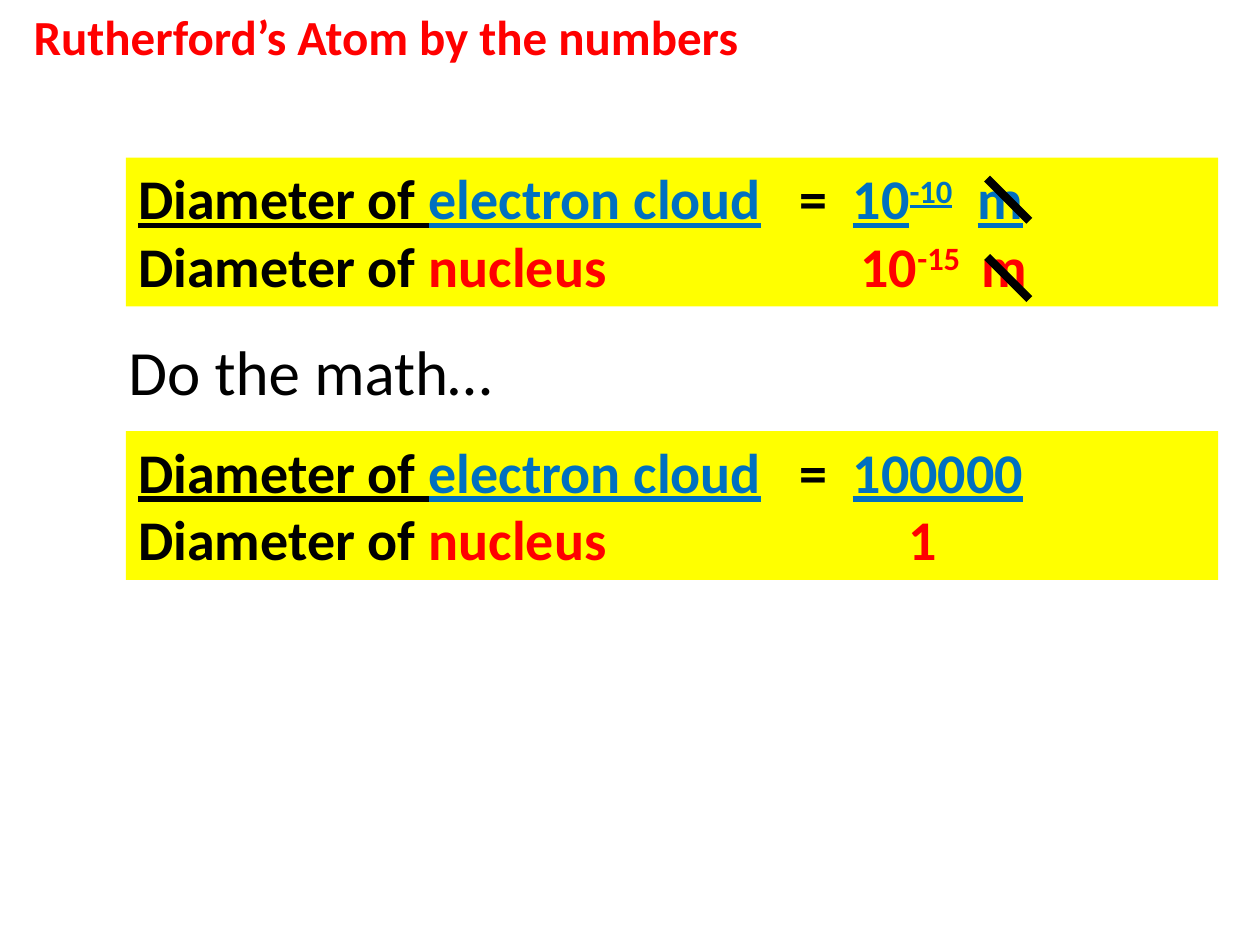
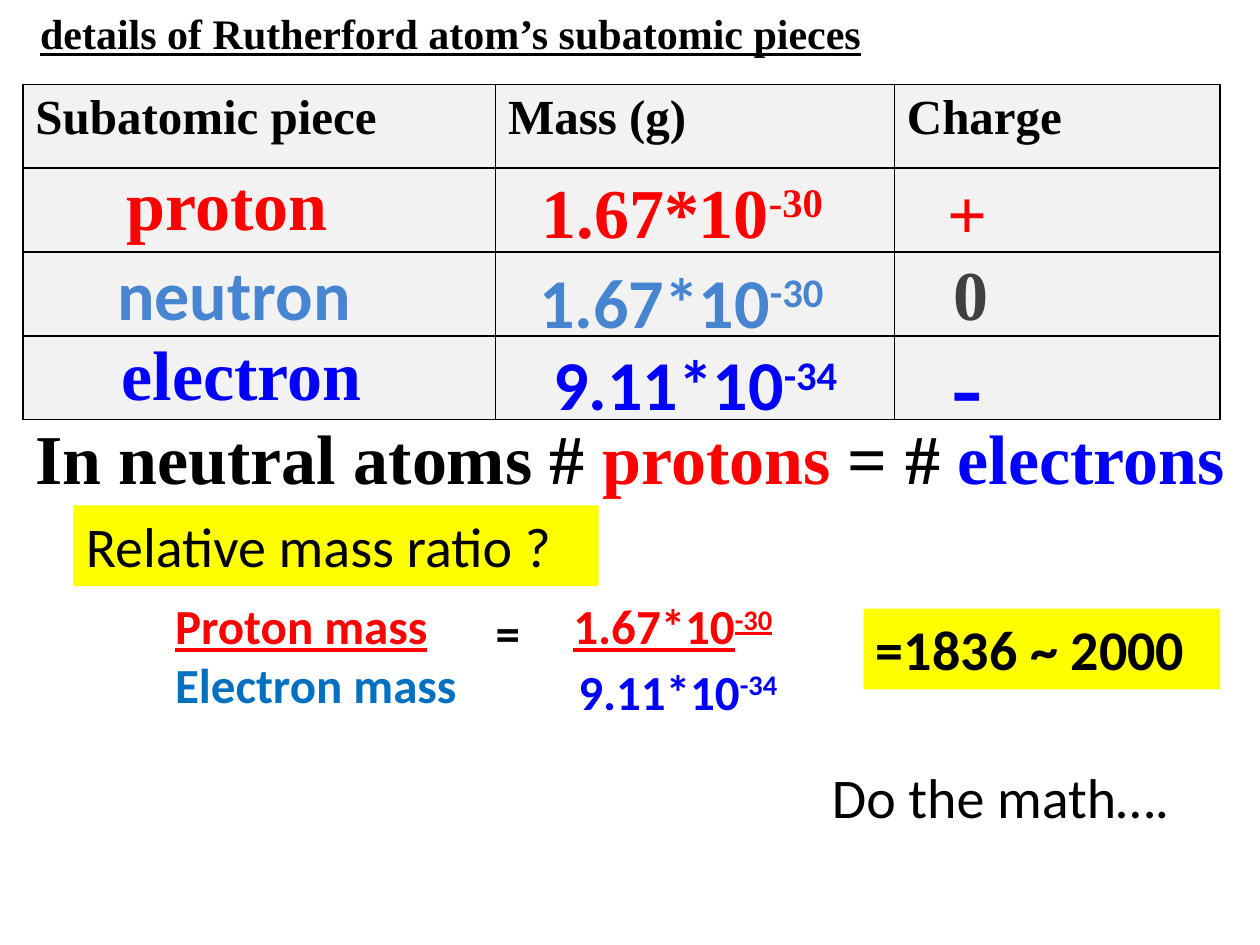
import pptx
import pptx.util
import pptx.dml.color
import pptx.enum.shapes
import pptx.enum.text
import pptx.oxml.ns
from lxml import etree

Cm = pptx.util.Cm
Pt = pptx.util.Pt
qn = pptx.oxml.ns.qn

COLORS = {
    "black": "000000", "red": "FF0000", "blue": "0070C0", "electron": "0000FF",
    "neutron": "4785D1", "neutral": "404040", "highlight": "FFFF00", "cell": "F2F2F2",
}
SANS = "Calibri"
SERIF = "Times New Roman"


def rgb(color):
    return pptx.dml.color.RGBColor.from_string(COLORS[color])


def format_run(run, size, font, color, bold, marks=""):
    run.font.size = Pt(size)
    run.font.name = font
    run.font.bold = bold
    run.font.color.rgb = rgb(color)
    run.font.underline = "u" in marks
    if "^" in marks:
        run.font._element.set("baseline", "30000")


def set_tabs(paragraph, stops):
    tabs = etree.SubElement(paragraph._p.get_or_add_pPr(), qn("a:tabLst"))
    for stop in stops:
        etree.SubElement(tabs, qn("a:tab"), pos=str(Cm(stop)), algn="l")


def write(frame, lines, size, font=SANS, bold=True, tabs=(), wrap=True):
    frame.word_wrap = wrap
    frame.auto_size = pptx.enum.text.MSO_AUTO_SIZE.SHAPE_TO_FIT_TEXT
    frame.vertical_anchor = pptx.enum.text.MSO_ANCHOR.TOP
    for index, line in enumerate(lines):
        paragraph = frame.add_paragraph() if index else frame.paragraphs[0]
        paragraph.alignment = pptx.enum.text.PP_ALIGN.LEFT
        if index < len(tabs):
            set_tabs(paragraph, tabs[index])
        for text, *style in line:
            run = paragraph.add_run()
            run.text = text
            format_run(run, size, font, style[0], bold, *style[1:])


def add_label(slide, box, lines, size, **style):
    label = slide.shapes.add_textbox(*map(Cm, box))
    write(label.text_frame, lines, size, **style)


def add_highlight(slide, box, lines, **style):
    panel = slide.shapes.add_shape(
        pptx.enum.shapes.MSO_SHAPE.RECTANGLE, *map(Cm, box))
    panel.shadow.inherit = False
    panel.fill.solid()
    panel.fill.fore_color.rgb = rgb("highlight")
    panel.line.fill.background()
    write(panel.text_frame, lines, 32, **style)


def add_strike(slide, left, top, side=0.85):
    strike = slide.shapes.add_connector(
        pptx.enum.shapes.MSO_CONNECTOR.STRAIGHT,
        Cm(left), Cm(top), Cm(left + side), Cm(top + side))
    strike.line.color.rgb = rgb("black")
    strike.line.width = Pt(4.75)
    etree.SubElement(strike._element.spPr, qn("a:effectLst"))


def add_diameter_ratio(slide, box, cloud, nucleus, tabs):
    add_highlight(slide, box, [
        [("Diameter of ", "black", "u"), ("electron cloud", "blue", "u"),
         ("\t=\t", "black"), *cloud],
        [("Diameter of", "black"), (" nucleus\t", "red"), *nucleus],
    ], tabs=tabs)


def power(base, exponent, color, marks=""):
    return [(base, color, marks), (exponent, color, marks + "^")]


def build_diameter_slide(slide):
    left, width, height = 2.54, 22.02, 3
    measured_top, result_top = 3.18, 8.69
    add_label(slide, (0.43, 0, 19.05, 1.45),
              [[("Rutherford’s Atom by the numbers", "red")]], 28)
    add_diameter_ratio(
        slide, (left, measured_top, width, height),
        power("10", "-10", "blue", "u") + [("\tm", "blue", "u")],
        power("10", "-15", "red") + [("\tm", "red")],
        [(13.33, 14.4, 16.92), (14.56, 16.99)])
    add_diameter_ratio(
        slide, (left, result_top, width, height),
        [("100000", "blue", "u")], [("1", "red")],
        [(13.33, 14.4), (15.52,)])
    for row in range(2):
        add_strike(slide, left + 17.36, measured_top + 0.42 + 1.58 * row)
    add_label(slide, (2.34, 6.58, 10.16, 1.8),
              [[("Do the math…", "black")]], 36, bold=False)


def set_borders(cell):
    properties = cell._tc.get_or_add_tcPr()
    for index, side in enumerate(("lnL", "lnR", "lnT", "lnB")):
        border = etree.Element(qn("a:" + side), w=str(Pt(1)))
        fill = etree.SubElement(border, qn("a:solidFill"))
        etree.SubElement(fill, qn("a:srgbClr"), val=COLORS["black"])
        properties.insert(index, border)


def add_particle_table(slide, left, top):
    widths, row_height = (9.53, 8.04, 6.56), 1.69
    headings = ("Subatomic piece", "Mass (g)", "Charge")
    table = slide.shapes.add_table(
        4, 3, Cm(left), Cm(top), Cm(sum(widths)), Cm(4 * row_height)).table
    for column, width in zip(table.columns, widths):
        column.width = Cm(width)
    for row in table.rows:
        row.height = Cm(row_height)
    for cell in table.iter_cells():
        cell.fill.solid()
        cell.fill.fore_color.rgb = rgb("cell")
        set_borders(cell)
    for cell, heading in zip(table.rows[0].cells, headings):
        cell.text = heading
        format_run(cell.text_frame.paragraphs[0].runs[0], 28, SERIF, "black", True)

    entries = [
        (1.85, 1.42, 9.09, [("proton", "red")], 40, SERIF),
        (10.21, 1.57, 6.78, power("1.67*10", "-30", "red"), 40, SERIF),
        (18.39, 1.6, 2.74, [("+", "red")], 40, SERIF),
        (1.65, 3.22, 6.55, [("neutron", "neutron")], 40, SANS),
        (10.16, 3.38, 6.78, power("1.67*10", "-30", "neutron"), 40, SANS),
        (18.52, 3.22, 2.74, [("0", "neutral")], 40, SERIF),
        (1.75, 4.83, 6.55, [("electron", "electron")], 40, SERIF),
        (10.44, 5.05, 6.8, power("9.11*10", "-34", "electron"), 40, SANS),
        (18.47, 4.72, 4.65, [("-", "electron")], 54, SERIF),
    ]
    for x, y, width, line, size, font in entries:
        height = 1.96 if size == 40 else 2.57
        add_label(slide, (left + x, top + y, width, height), [line], size, font=font)


def add_mass_ratio(slide, left, top):
    add_highlight(slide, (left, top, 10.59, 1.63),
                  [[("Relative mass ratio ?", "black")]], bold=False)
    add_label(slide, (left + 1.8, top + 1.7, 6.99, 2.64),
              [[("Proton mass", "red", "u")], [("Electron mass", "blue")]], 28)
    add_label(slide, (left + 8.26, top + 1.83, 1.47, 1.45), [[("=", "black")]], 28)
    add_label(slide, (left + 9.83, top + 1.7, 4.7, 1.45),
              [power("1.67*10", "-30", "red", "u")], 28, wrap=False)
    add_label(slide, (left + 9.93, top + 3.02, 4.7, 1.45),
              [power("9.11*10", "-34", "electron")], 28, wrap=False)
    add_highlight(slide, (left + 15.93, top + 2.08, 7.19, 1.63),
                  [[("=1836 ~ 2000", "black")]])
    add_label(slide, (left + 15.04, top + 5.05, 8.08, 1.63),
              [[("Do the math….", "black")]], 32, bold=False)


def build_particle_slide(slide):
    add_particle_table(slide, 0.46, 1.7)
    add_label(slide, (0.13, 0.03, 24.77, 1.27),
              [[("\tdetails of Rutherford atom’s subatomic pieces\t", "black", "u")]],
              24, font=SERIF, tabs=[(0.43, 17.6)])
    add_label(slide, (0.46, 8.23, 25.4, 1.96),
              [[("In neutral atoms # ", "black"), ("protons", "red"),
                (" = # ", "black"), ("electrons", "electron")]], 40, font=SERIF)
    add_mass_ratio(slide, 1.48, 10.19)


def main():
    deck = pptx.Presentation()
    deck.slide_width, deck.slide_height = Cm(25.4), Cm(19.05)
    for build in (build_diameter_slide, build_particle_slide):
        build(deck.slides.add_slide(deck.slide_layouts[6]))
    deck.save("out.pptx")


if __name__ == "__main__":
    main()
